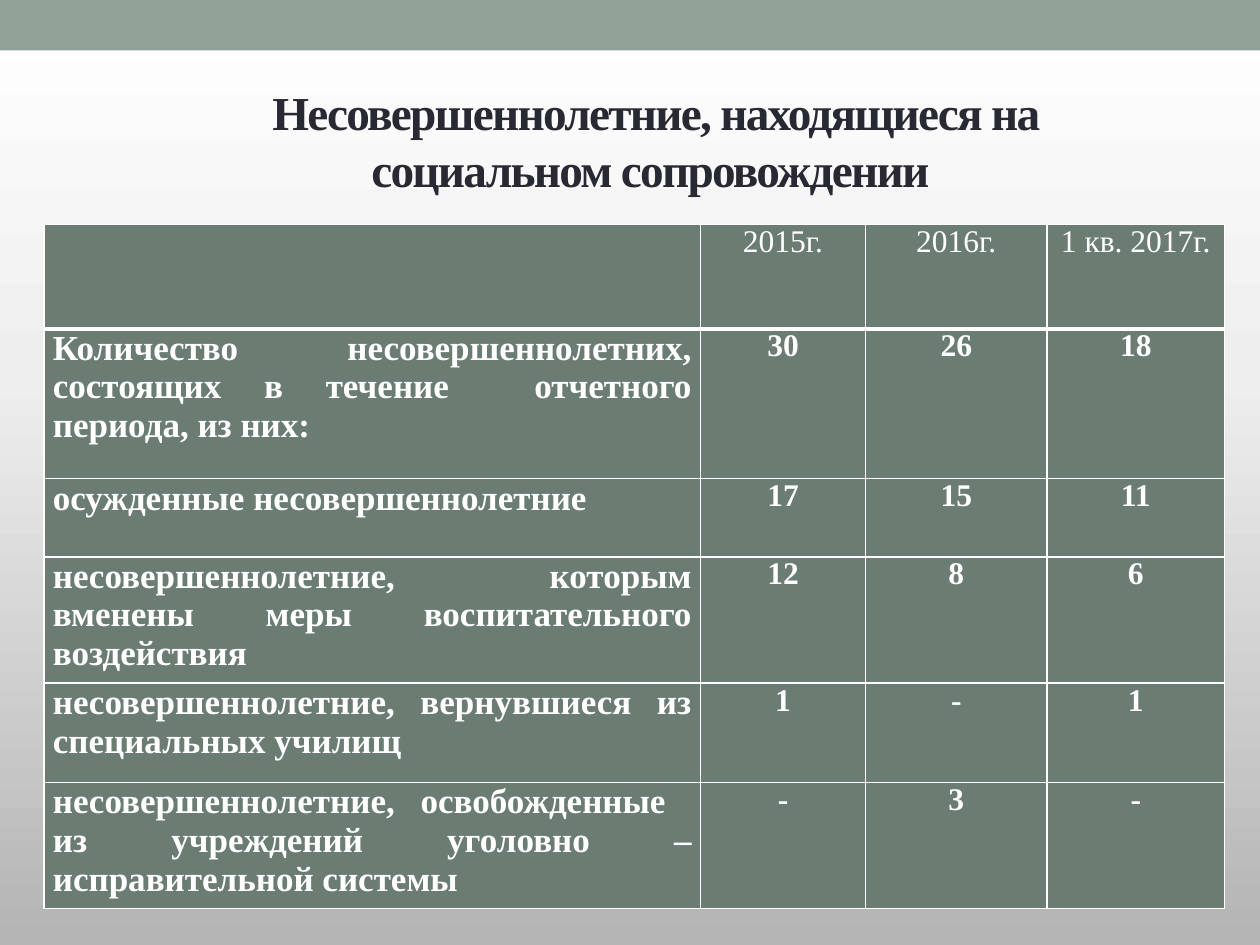
from dataclasses import dataclass
from pptx import Presentation
from pptx.dml.color import RGBColor
from pptx.enum.shapes import MSO_SHAPE
from pptx.enum.text import MSO_ANCHOR, PP_ALIGN
from pptx.oxml import parse_xml
from pptx.oxml.ns import nsdecls, qn
from pptx.slide import Slide
from pptx.table import _Cell
from pptx.text.text import _Paragraph
from pptx.util import Inches, Pt

WHITE = RGBColor(0xFF, 0xFF, 0xFF)
SAGE = RGBColor(0x93, 0xA2, 0x99)
GREEN = RGBColor(0x6B, 0x7D, 0x72)
DARK = RGBColor(0x29, 0x29, 0x34)
LIGHT = RGBColor(0xEE, 0xEE, 0xEE)
GREY = RGBColor(0xB4, 0xB4, 0xB4)
FONT = "Times New Roman"
STOPS = ((0, WHITE), (40, LIGHT), (100, GREY))
WIDTHS = (5.21, 1.31, 1.44, 1.41)


@dataclass
class Band:
    top: float
    height: float
    color: RGBColor


@dataclass
class Row:
    height: float
    texts: tuple[str, ...]


BANDS = (Band(0.24, 0.25, WHITE), Band(0, 0.4, SAGE))
ROWS = (
    Row(0.83, ("", "2015г.", "2016г.", "1 кв. 2017г.")),
    Row(1.19, ("Количество несовершеннолетних, состоящих в течение  отчетного периода, из них:",
               "30", "26", "18")),
    Row(0.62, ("осужденные несовершеннолетние", "17", "15", "11")),
    Row(0.93, ("несовершеннолетние, которым вменены меры воспитательного воздействия",
               "12", "8", "6")),
    Row(0.79, ("несовершеннолетние, вернувшиеся из специальных училищ", "1", "-", "1")),
    Row(0.93, ("несовершеннолетние, освобожденные  из учреждений уголовно – исправительной системы",
               "-", "3", "-")),
)


def paint_back(slide: Slide) -> None:
    fill = slide.background.fill
    fill.gradient()
    fill.gradient_angle = 270
    stops = slide.element.find(".//" + qn("a:gsLst"))
    for stop in list(stops):
        stops.remove(stop)
    for place, color in STOPS:
        stops.append(parse_xml(
            f'<a:gs {nsdecls("a")} pos="{place * 1000}"><a:srgbClr val="{color}"/></a:gs>'))


def draw_band(slide: Slide, band: Band) -> None:
    shape = slide.shapes.add_shape(
        MSO_SHAPE.RECTANGLE, 0, Inches(band.top), Inches(10), Inches(band.height))
    shape.shadow.inherit = False
    shape.fill.solid()
    shape.fill.fore_color.rgb = band.color
    shape.line.fill.background()


def style_text(para: _Paragraph, size: float, color: RGBColor, bold: bool, align: PP_ALIGN) -> None:
    para.alignment = align
    for item in (para, *para.runs):
        item.font.name = FONT
        item.font.size = Pt(size)
        item.font.bold = bold
        item.font.color.rgb = color


def draw_title(slide: Slide) -> None:
    box = slide.shapes.add_textbox(Inches(1.22), Inches(0.6), Inches(7.96), Inches(1.02))
    frame = box.text_frame
    frame.word_wrap = True
    frame.vertical_anchor = MSO_ANCHOR.MIDDLE
    frame.text = "Несовершеннолетние, находящиеся на социальном сопровождении "
    para = frame.paragraphs[0]
    style_text(para, 27, DARK, True, PP_ALIGN.CENTER)
    para.runs[0].font._element.set("spc", "-100")


def draw_edge(cell: _Cell, side: str, width: float, index: int) -> None:
    cell._tc.get_or_add_tcPr().insert(index, parse_xml(
        f'<a:ln{side} {nsdecls("a")} w="{Pt(width)}"><a:solidFill>'
        f'<a:srgbClr val="{WHITE}"/></a:solidFill></a:ln{side}>'))


def fill_cell(cell: _Cell, text: str, row: int, col: int) -> None:
    cell.fill.solid()
    cell.fill.fore_color.rgb = GREEN
    cell.margin_left = cell.margin_right = Inches(0.07)
    cell.margin_top = cell.margin_bottom = 0
    cell.text_frame.text = text
    size, align = (18, PP_ALIGN.CENTER) if col else (20, PP_ALIGN.JUSTIFY)
    style_text(cell.text_frame.paragraphs[0], size, WHITE, row > 0, align)
    widths = {"L": 1, "R": 1, "T": 3 if row == 1 else 1, "B": 3 if row == 0 else 1}
    for index, (side, width) in enumerate(widths.items()):
        draw_edge(cell, side, width, index)


def draw_table(slide: Slide) -> None:
    table = slide.shapes.add_table(
        len(ROWS), len(WIDTHS), Inches(0.35), Inches(1.78), Inches(sum(WIDTHS)),
        Inches(sum(row.height for row in ROWS))).table
    for column, width in zip(table.columns, WIDTHS):
        column.width = Inches(width)
    for r, row in enumerate(ROWS):
        table.rows[r].height = Inches(row.height)
        for c, text in enumerate(row.texts):
            fill_cell(table.cell(r, c), text, r, c)


def main() -> None:
    deck = Presentation()
    deck.slide_width = Inches(10)
    deck.slide_height = Inches(7.5)
    slide = deck.slides.add_slide(deck.slide_layouts[6])
    paint_back(slide)
    for band in BANDS:
        draw_band(slide, band)
    draw_title(slide)
    draw_table(slide)
    deck.save("out.pptx")


if __name__ == "__main__":
    main()
